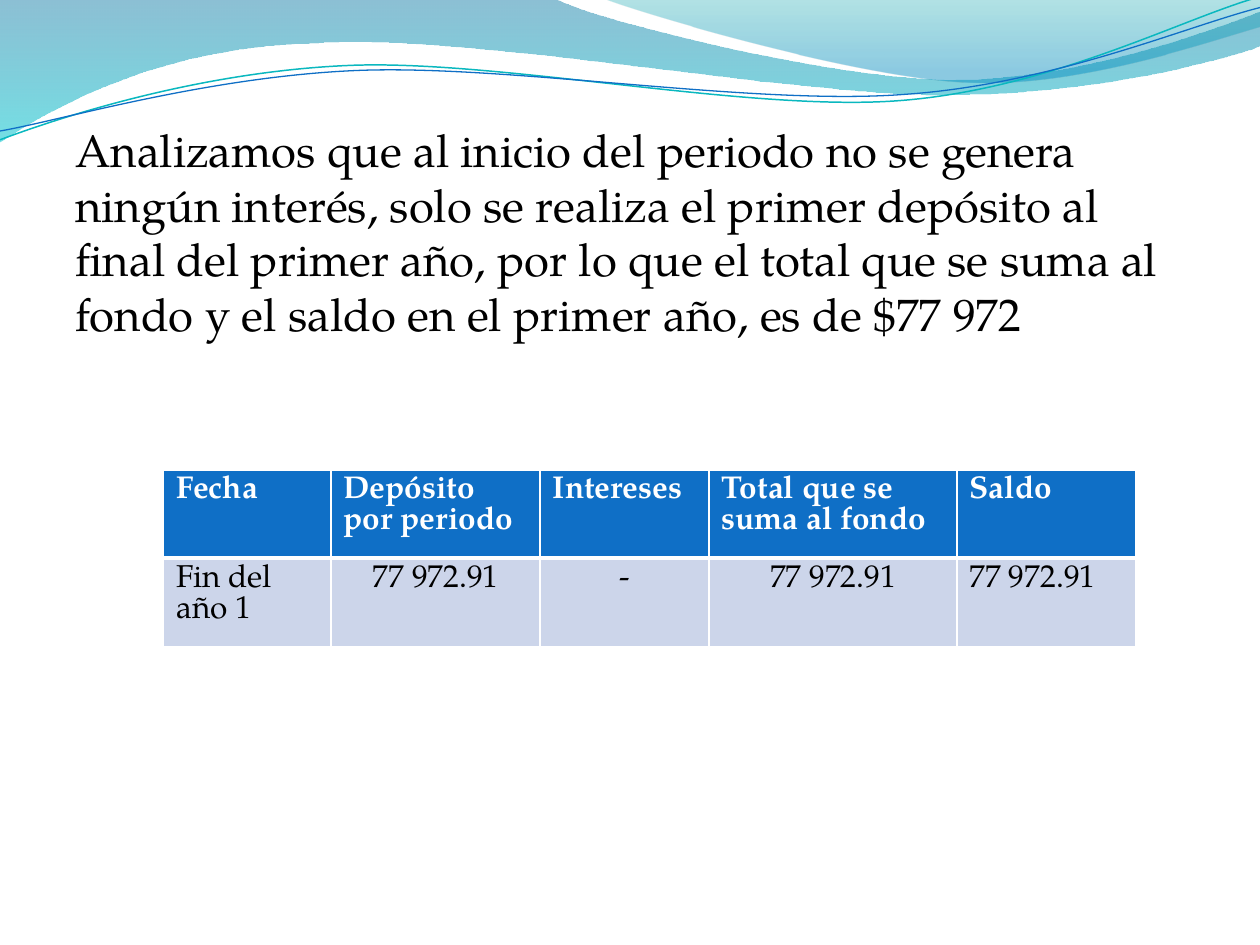
from lxml import etree
from pptx import Presentation
from pptx.dml.color import RGBColor
from pptx.enum.text import PP_ALIGN
from pptx.oxml.ns import qn
from pptx.util import Cm, Pt

LEFT, CENTER = PP_ALIGN.LEFT, PP_ALIGN.CENTER
FONT = "TeX Gyre Pagella"
COLORS = {
    "text": "000000", "white": "FFFFFF", "header": "0F6FC6", "row": "CCD5EA",
    "deep": "0074A1", "aqua": "00C6CF", "teal": "00A1A9", "sky": "008BBF",
    "teal_line": "0AB8BF", "blue_line": "0F6FC6",
}

# Outlines in tenths of the slide width: a pair is a line, a six is a curve
LEFT_WAVE = [
    (0, 0), (4.4, -0.01), (4.76, 0.17, 6.64, 0.63, 7.58, 0.63),
    (8.53, 0.63, 9.58, 0.26, 10, 0.09), (10.01, 0.36),
    (9.83, 0.44, 8.7, 0.76, 7.46, 0.75), (6.22, 0.75, 3.82, 0.28, 2.57, 0.34),
    (1.29, 0.36, 0.46, 0.83, -0.01, 1.13),
]
RIGHT_WAVE = [
    (4.79, -0.01), (5.09, 0.11, 6.82, 0.62, 7.69, 0.65),
    (8.56, 0.69, 9.61, 0.32, 10, 0.21), (10, 0),
]
TEAL_CURVE = [
    (0, 1.11), (0.48, 0.93, 1.58, 0.57, 2.77, 0.52),
    (3.95, 0.47, 5.93, 0.89, 7.13, 0.8), (8.33, 0.71, 9.38, 0.15, 9.98, -0.02),
]
BLUE_CURVE = [
    (0, 1.04), (0.47, 0.96, 1.64, 0.61, 2.83, 0.56),
    (4.03, 0.51, 5.97, 0.84, 7.17, 0.75), (8.36, 0.67, 9.41, 0.21, 10, 0.06),
]


def rgb(name):
    return RGBColor.from_string(COLORS[name])


def add_outline(s, outline, left, top, width, closed):
    unit = width / 10
    pts = [(Cm(left + seg[i] * unit), Cm(top + seg[i + 1] * unit))
           for seg in outline for i in range(0, len(seg), 2)]
    fb = s.shapes.build_freeform(*pts[0])
    fb.add_line_segments(pts[1:], close=closed)
    sp = fb.convert_to_shape()
    sp.shadow.inherit = False
    # Join each three points of a curve into one Bézier segment
    lines = iter(list(sp._element.spPr.iter(qn("a:lnTo"))))
    for seg in outline[1:]:
        first = next(lines)
        if len(seg) == 6:
            curve = etree.Element(qn("a:cubicBezTo"))
            first.addprevious(curve)
            for line in (first, next(lines), next(lines)):
                curve.append(line[0])
                line.getparent().remove(line)
    return sp


def add_waves(s, left, top, width):
    # Translucent bands: (colour, opacity %, position)
    for outline, stops in (
        (LEFT_WAVE, (("deep", 45, 0), ("aqua", 55, 1))),
        (RIGHT_WAVE, (("teal", 30, 0), ("sky", 45, 0.8))),
    ):
        sp = add_outline(s, outline, left, top, width, True)
        sp.line.fill.background()
        sp.fill.gradient()
        sp.fill.gradient_angle = 270
        for stop, (color, _, position) in zip(sp.fill.gradient_stops, stops):
            stop.color.rgb = rgb(color)
            stop.position = position
        clrs = sp._element.spPr.iter(qn("a:srgbClr"))
        for clr, (_, opacity, _) in zip(list(clrs), stops):
            etree.SubElement(clr, qn("a:alpha"), val=str(opacity * 1000))
    # Thin curves
    for outline, color, weight in (
        (TEAL_CURVE, "teal_line", 0.85), (BLUE_CURVE, "blue_line", 0.75),
    ):
        sp = add_outline(s, outline, left, top, width, False)
        sp.fill.background()
        sp.line.color.rgb = rgb(color)
        sp.line.width = Pt(weight)


def write(tf, text, size, color="text", bold=False, align=LEFT, before=0):
    tf.word_wrap = True
    p = tf.paragraphs[0]
    p.alignment = align
    p.space_before = Pt(before)
    r = p.add_run()
    r.text = text
    r.font.name, r.font.size, r.font.bold = FONT, Pt(size), bold
    r.font.color.rgb = rgb(color)


def add_body(s, left, top, width, height):
    box = s.shapes.add_textbox(Cm(left), Cm(top), Cm(width), Cm(height))
    write(box.text_frame,
          "Analizamos que al inicio del periodo no se genera ningún interés, solo "
          "se realiza el primer depósito al final del primer año, por lo que el "
          "total que se suma al fondo y el saldo en el primer año, es de $77 972",
          26, before=5.2)


def set_borders(cell, **weights):
    tcPr = cell._tc.get_or_add_tcPr()
    for i, side in enumerate("LRTB"):
        ln = etree.Element(qn("a:ln" + side), w=str(Pt(weights.get(side, 1))))
        fill = etree.SubElement(ln, qn("a:solidFill"))
        etree.SubElement(fill, qn("a:srgbClr"), val=COLORS["white"])
        tcPr.insert(i, ln)


def add_fund_table(s, left, top, width, height, row_height):
    shares = (1.33, 1.66, 1.34, 1.97, 1.42)
    rows = (
        ("Fecha", "Depósito por periodo", "Intereses",
         "Total que se suma al fondo", "Saldo"),
        ("Fin del año 1", "77 972.91", "-", "77 972.91", "77 972.91"),
    )
    frame = s.shapes.add_table(len(rows), len(shares), Cm(left), Cm(top),
                               Cm(width), Cm(height))
    table = frame.table
    for col, share in zip(table.columns, shares):
        col.width = Cm(width * share / sum(shares))
    for i, row in enumerate(rows):
        table.rows[i].height = Cm(row_height)
        head = i == 0
        for j, text in enumerate(row):
            cell = table.cell(i, j)
            cell.fill.solid()
            cell.fill.fore_color.rgb = rgb("header" if head else "row")
            set_borders(cell, **({"B": 3} if head else {"T": 3}))
            write(cell.text_frame, text, 18, "white" if head else "text", bold=head,
                  align=CENTER if not head and j in (1, 2, 3) else LEFT)
    frame.height = Cm(height)  # rows grow with their text


def main():
    prs = Presentation()
    prs.slide_width, prs.slide_height = Cm(25.4), Cm(19.05)
    s = prs.slides.add_slide(prs.slide_layouts[6])
    add_waves(s, 0, 0, 25.4)
    add_body(s, 1.27, 2.34, 22.86, 12.19)
    add_fund_table(s, 3.3, 9.47, 19.6, 3.56, 1.04)
    prs.save("out.pptx")


if __name__ == "__main__":
    main()
